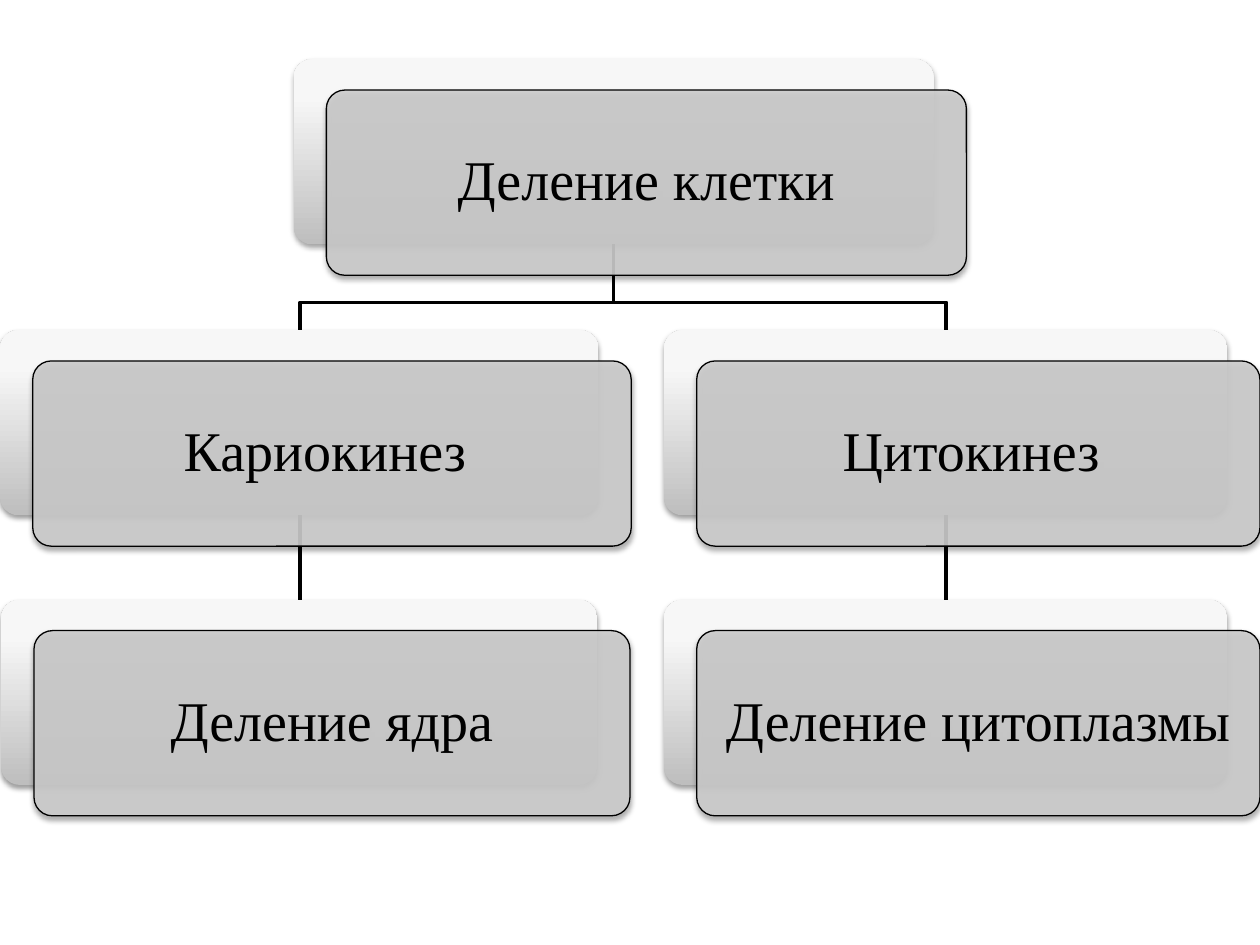
from lxml.etree import SubElement
from pptx import Presentation
from pptx.dml.color import RGBColor
from pptx.enum.shapes import MSO_CONNECTOR, MSO_SHAPE
from pptx.enum.text import MSO_ANCHOR, PP_ALIGN
from pptx.oxml.ns import qn
from pptx.util import Inches, Pt
from copy import deepcopy

"""Build a slide with the tree of cell division."""

HUES = {"ink": "000000", "card": "CCCCCC", "low": "BEBEBE", "mid": "F7F7F7", "top": "F8F8F8"}
TALL = 1.47
ROWS = [0.47, 2.62, 4.76]
SHIFT = (0.26, 0.245)
ROOT = 4.87
STEMS = [7.51, 2.38]
NODES = [
    ("Деление клетки", 2.33, 0, 5.08),
    ("Кариокинез ", 0, 1, 4.75),
    ("Деление ядра", 0.01, 2, 4.73),
    ("Цитокинез ", 5.27, 1, 4.47),
    ("Деление цитоплазмы", 5.27, 2, 4.47),
]


def hue(name):
    return RGBColor.from_string(HUES[name])


def set_line(shape, width):
    shape.line.color.rgb = hue("ink")
    shape.line.width = Pt(width)


def add_shade(shape, alpha, dist):
    shape.shadow.inherit = False
    effects = shape._element.spPr.find(qn("a:effectLst"))
    shade = SubElement(effects, qn("a:outerShdw"), blurRad=str(Pt(3.1)),
                       dist=str(Pt(dist)), dir="5400000", rotWithShape="0")
    color = SubElement(shade, qn("a:srgbClr"), val=HUES["ink"])
    SubElement(color, qn("a:alpha"), val=str(alpha * 1000))


def add_box(shapes, left, top, width):
    box = shapes.add_shape(MSO_SHAPE.ROUNDED_RECTANGLE, Inches(left), Inches(top),
                           Inches(width), Inches(TALL))
    box.adjustments[0] = 0.1
    return box


def add_back(shapes, left, top, width, shade):
    back = add_box(shapes, left, top, width)
    back.fill.gradient()
    back.fill.gradient_angle = 90
    stops = back._element.spPr.find(qn("a:gradFill")).find(qn("a:gsLst"))
    stops.append(deepcopy(stops[-1]))
    for stop, name, place in zip(back.fill.gradient_stops, ("low", "mid", "top"), (0, 0.8, 1)):
        stop.color.rgb = hue(name)
        stop.position = place
    back.line.fill.background()
    add_shade(back, *shade)


def add_card(shapes, text, left, top, width):
    card = add_box(shapes, left, top, width)
    card.fill.solid()
    card.fill.fore_color.rgb = hue("card")
    color = card._element.spPr.find(qn("a:solidFill"))[0]
    SubElement(color, qn("a:alpha"), val="90000")
    set_line(card, 0.75)
    add_shade(card, 35, 1.8)
    frame = card.text_frame
    frame.word_wrap = True
    frame.vertical_anchor = MSO_ANCHOR.MIDDLE
    frame.margin_left = frame.margin_right = Inches(0.17)
    frame.margin_top = frame.margin_bottom = Inches(0.17)
    para = frame.paragraphs[0]
    para.alignment = PP_ALIGN.CENTER
    para.line_spacing = 0.9
    run = para.add_run()
    run.text = text
    run.font.name = "Times New Roman"
    run.font.size = Pt(32)
    run.font.color.rgb = hue("ink")


def add_node(shapes, text, left, row, width):
    top = ROWS[row]
    add_back(shapes, left, top, width, (38, 1.6) if row else (35, 1.8))
    add_card(shapes, text, left + SHIFT[0], top + SHIFT[1], width)


def add_stem(shapes, x):
    stem = shapes.add_connector(MSO_CONNECTOR.STRAIGHT, Inches(x), Inches(ROWS[1] + TALL),
                                Inches(x), Inches(ROWS[2]))
    set_line(stem, 2)
    SubElement(stem._element.spPr, qn("a:effectLst"))


def add_branch(shapes, x):
    bend = 2.4
    path = shapes.build_freeform(Inches(ROOT), Inches(ROWS[0] + TALL))
    points = [(ROOT, bend), (x, bend), (x, ROWS[1])]
    path.add_line_segments([(Inches(a), Inches(b)) for a, b in points], close=False)
    branch = path.convert_to_shape()
    branch.fill.background()
    branch.shadow.inherit = False
    set_line(branch, 2)


def main():
    deck = Presentation()
    deck.slide_width, deck.slide_height = Inches(10), Inches(7.5)
    slide = deck.slides.add_slide(deck.slide_layouts[6])
    shapes = slide.shapes.add_group_shape().shapes
    for x in STEMS:
        add_stem(shapes, x)
        add_branch(shapes, x)
    for node in NODES:
        add_node(shapes, *node)
    deck.save("out.pptx")


if __name__ == "__main__":
    main()
